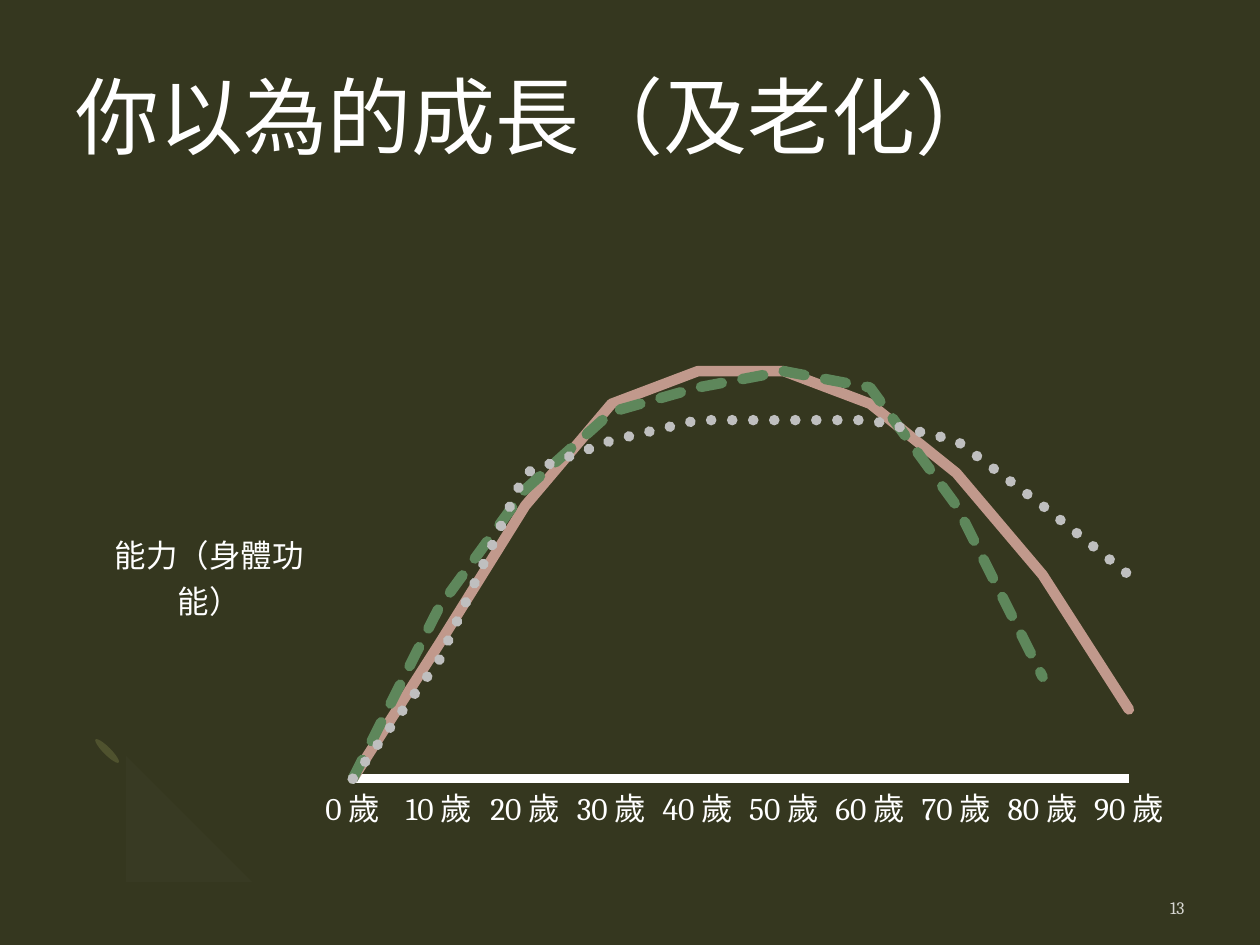
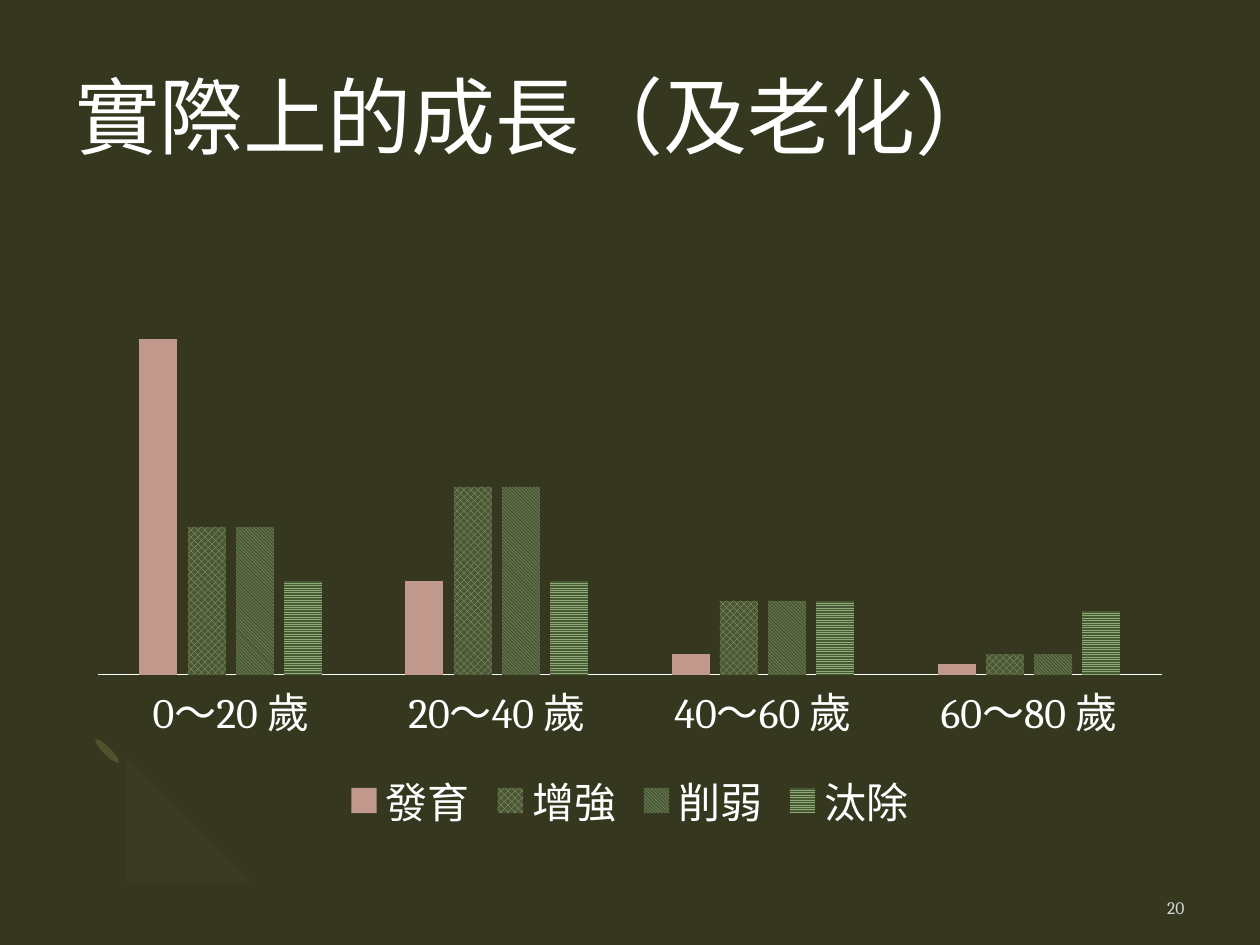
"""Build two slides that compare imagined and actual growth and ageing."""
from lxml import etree
from pptx import Presentation
from pptx import util as u
from pptx.chart.data import CategoryChartData
from pptx.dml.color import RGBColor
from pptx.enum import chart as ch, dml, shapes, text
from pptx.oxml import ns

BG, WHITE, PAGE_GREY = "35371F", "FFFFFF", "D7D7D2"
LEAF, STEM = "4F522E", "383A23"
ROSE, GREEN, GREY, OLIVE = "C1998C", "5E875B", "BFBFBF", "485936"
HEAD, BODY = "Roboto", "Cambria"

IMAGINED = {
    "title": "你以為的成長（及老化）", "page": "13",
    "type": ch.XL_CHART_TYPE.LINE,
    "cats": [f"{age} 歲" for age in range(0, 100, 10)],
    "series": [
        ("Series 1", [0, 33, 67, 92, 100, 100, 92, 75, 50, 17]),
        ("Series 2", [0, 42, 71, 90, 96, 100, 96, 67, 25, None]),
        ("Series 3", [0, 29, 75, 83, 88, 88, 88, 83, 67, 50]),
    ],
    "top": 117, "label_size": 18, "axis_width": 5,
    "plot": {"x": 0.25, "y": 0.02, "w": 0.7, "h": 0.87},
}
ACTUAL = {
    "title": "實際上的成長（及老化）", "page": "20",
    "type": ch.XL_CHART_TYPE.COLUMN_CLUSTERED,
    "cats": [f"{age}～{age + 20} 歲" for age in range(0, 80, 20)],
    "series": [
        ("發育", [100, 28, 6, 3]),
        ("增強", [44, 56, 22, 6]),
        ("削弱", [44, 56, 22, 6]),
        ("汰除", [28, 28, 22, 19]),
    ],
    "top": 111, "label_size": 24, "axis_width": 0.75,
    "plot": {"x": 0.02, "y": 0.02, "w": 0.96, "h": 0.68},
}
ABILITY = "能力（身體功能）"
LINES = [(ROSE, None), (GREEN, dml.MSO_LINE.SQUARE_DOT), (GREY, dml.MSO_LINE.ROUND_DOT)]
PATTERNS = [
    None,
    (dml.MSO_PATTERN.LARGE_CHECKER_BOARD, "B5A17B"),
    (dml.MSO_PATTERN.DARK_DOWNWARD_DIAGONAL, "A3A67E"),
    (dml.MSO_PATTERN.LIGHT_HORIZONTAL, "8FAA74"),
]
LEAVES = [(1.35, 6.37), (0.82, 5.83)]
STEM_CURVES = [
    [(0.76, 6.59), (0.56, 6.39), (0.58, 6.05), (0.81, 5.82)],
    [(0.99, 6), (0.87, 6.11), (0.86, 6.29), (0.96, 6.38)],
    [(0.96, 6.38), (1.06, 6.48), (1.23, 6.47), (1.35, 6.36)],
    [(1.52, 6.54), (1.3, 6.76), (0.95, 6.79), (0.76, 6.59)],
]


def rgb(code):
    """Turn a hex string into a colour."""
    return RGBColor.from_string(code)


def inches(*values):
    """Turn numbers into lengths."""
    return [u.Inches(v) for v in values]


def style(font, size, color=WHITE, name=BODY):
    """Format a font."""
    font.size, font.name, font.bold = u.Pt(size), name, False
    font.color.rgb = rgb(color)


def write(tf, content, size=18, align=None, spacing=None, **fmt):
    """Put one formatted paragraph in a text frame."""
    p = tf.paragraphs[0]
    r = p.add_run()
    r.text = content
    style(r.font, size, **fmt)
    p.alignment = align
    if spacing:
        p.line_spacing = spacing


def frame(tf, anchor):
    """Remove the margins of a text frame and set its anchor."""
    tf.margin_left = tf.margin_right = tf.margin_top = tf.margin_bottom = 0
    tf.word_wrap, tf.vertical_anchor = True, anchor


def paint(sp, color):
    """Give a shape a plain fill."""
    sp.shadow.inherit = False
    sp.fill.solid()
    sp.fill.fore_color.rgb = rgb(color)
    sp.line.fill.background()


def bezier(curve, steps=12):
    """Sample the points of a cubic curve."""
    points = []
    for i in range(steps + 1):
        t = i / steps
        weights = ((1 - t) ** 3, 3 * t * (1 - t) ** 2, 3 * t * t * (1 - t), t ** 3)
        points.append(tuple(sum(w * p[k] for w, p in zip(weights, curve)) for k in (0, 1)))
    return points


def add_sprig(s):
    """Draw the two leaves and the faint stem."""
    for left, top in LEAVES:
        sp = s.shapes.add_shape(shapes.MSO_SHAPE.OVAL, *inches(left, top, 0.06, 0.26))
        sp.rotation = 135
        paint(sp, LEAF)
    start, *rest = [pt for curve in STEM_CURVES for pt in bezier(curve)]
    outline = s.shapes.build_freeform(*start, scale=u.Inches(1))
    outline.add_line_segments(rest)
    paint(outline.convert_to_shape(), STEM)


def place(parent, index, **box):
    """Fix the layout of a chart part as shares of the chart."""
    for old in parent.findall(ns.qn("c:layout")):
        parent.remove(old)
    layout = etree.Element(ns.qn("c:layout"))
    manual = etree.SubElement(layout, ns.qn("c:manualLayout"))
    if "w" in box:
        etree.SubElement(manual, ns.qn("c:layoutTarget"), val="inner")
    for key in ("x", "y"):
        etree.SubElement(manual, ns.qn(f"c:{key}Mode"), val="edge")
    for key, share in box.items():
        etree.SubElement(manual, ns.qn(f"c:{key}"), val=str(share))
    parent.insert(index, layout)


def start_on_axis(axis):
    """Let the first category stand on the value axis."""
    for old in axis._element.findall(ns.qn("c:crossBetween")):
        axis._element.remove(old)
    cross = etree.Element(ns.qn("c:crossBetween"), val="midCat")
    before = axis._element.find(ns.qn("c:crosses"))
    if before is None:
        before = axis._element.find(ns.qn("c:crossAx"))
    before.addnext(cross)


def format_lines(chart):
    """Style the line series and the titled value axis."""
    for ser, (color, dash) in zip(chart.plots[0].series, LINES):
        ser.smooth = False
        ser.marker.style = ch.XL_MARKER_STYLE.NONE
        line = ser.format.line
        line.width = u.Pt(6)
        line.color.rgb = rgb(color)
        if dash:
            line.dash_style = dash
        ser._element.find(".//" + ns.qn("a:ln")).set("cap", "rnd")
    axis = chart.value_axis
    axis.tick_label_position = ch.XL_TICK_LABEL_POSITION.NONE
    axis.format.line.fill.background()
    tf = axis.axis_title.text_frame
    write(tf, ABILITY, align=text.PP_ALIGN.CENTER)
    tf._txBody.bodyPr.set("rot", "0")
    tf._txBody.bodyPr.set("vert", "horz")
    place(axis.axis_title._element, 1, x=0.03, y=0.42)
    start_on_axis(axis)


def format_columns(chart):
    """Style the columns and the legend."""
    plot = chart.plots[0]
    plot.gap_width, plot.overlap = 219, -27
    for ser, pattern in zip(plot.series, PATTERNS):
        fill = ser.format.fill
        if pattern:
            fill.patterned()
            fill.pattern = pattern[0]
            fill.fore_color.rgb, fill.back_color.rgb = rgb(pattern[1]), rgb(OLIVE)
        else:
            fill.solid()
            fill.fore_color.rgb = rgb(ROSE)
    chart.value_axis.visible = False
    chart.has_legend = True
    chart.legend.position = ch.XL_LEGEND_POSITION.BOTTOM
    chart.legend.include_in_layout = False
    style(chart.legend.font, 24)


def add_growth_chart(s, item):
    """Add the chart with the settings that both slides share."""
    data = CategoryChartData()
    data.categories = item["cats"]
    for name, values in item["series"]:
        data.add_series(name, values)
    chart = s.shapes.add_chart(item["type"], *inches(0.6, 2.31, 8.8, 4.35), data).chart
    chart.has_title = chart.has_legend = False
    style(chart.font, 10)
    chart.plots[0].vary_by_categories = False
    for axis in (chart.category_axis, chart.value_axis):
        axis.has_major_gridlines = False
        axis.major_tick_mark = axis.minor_tick_mark = ch.XL_TICK_MARK.NONE
    axis = chart.category_axis
    style(axis.tick_labels.font, item["label_size"])
    axis.format.line.width = u.Pt(item["axis_width"])
    axis.format.line.color.rgb = rgb(WHITE)
    chart.value_axis.minimum_scale = 0
    chart.value_axis.maximum_scale = item["top"]
    place(chart._chartSpace.chart.plotArea, 0, **item["plot"])
    return chart


def add_slide(prs, item):
    """Add a slide with its title, sprig, chart and page number."""
    s = prs.slides.add_slide(prs.slide_layouts[5])
    add_sprig(s)
    title = s.shapes.title
    title.left, title.top, title.width, title.height = inches(0.6, 0.6, 8.8, 1.46)
    frame(title.text_frame, text.MSO_ANCHOR.TOP)
    write(title.text_frame, item["title"], 48, text.PP_ALIGN.LEFT, 0.9, name=HEAD)
    chart = add_growth_chart(s, item)
    page = s.shapes.add_textbox(*inches(7.55, 7.12, 1.85, 0.17)).text_frame
    frame(page, text.MSO_ANCHOR.MIDDLE)
    write(page, item["page"], 10, text.PP_ALIGN.RIGHT, color=PAGE_GREY)
    return chart


def main():
    """Build and save the deck."""
    prs = Presentation()
    prs.slide_width, prs.slide_height = inches(10, 7.5)
    fill = prs.slide_master.background.fill
    fill.solid()
    fill.fore_color.rgb = rgb(BG)
    format_lines(add_slide(prs, IMAGINED))
    format_columns(add_slide(prs, ACTUAL))
    prs.save("out.pptx")


if __name__ == "__main__":
    main()
